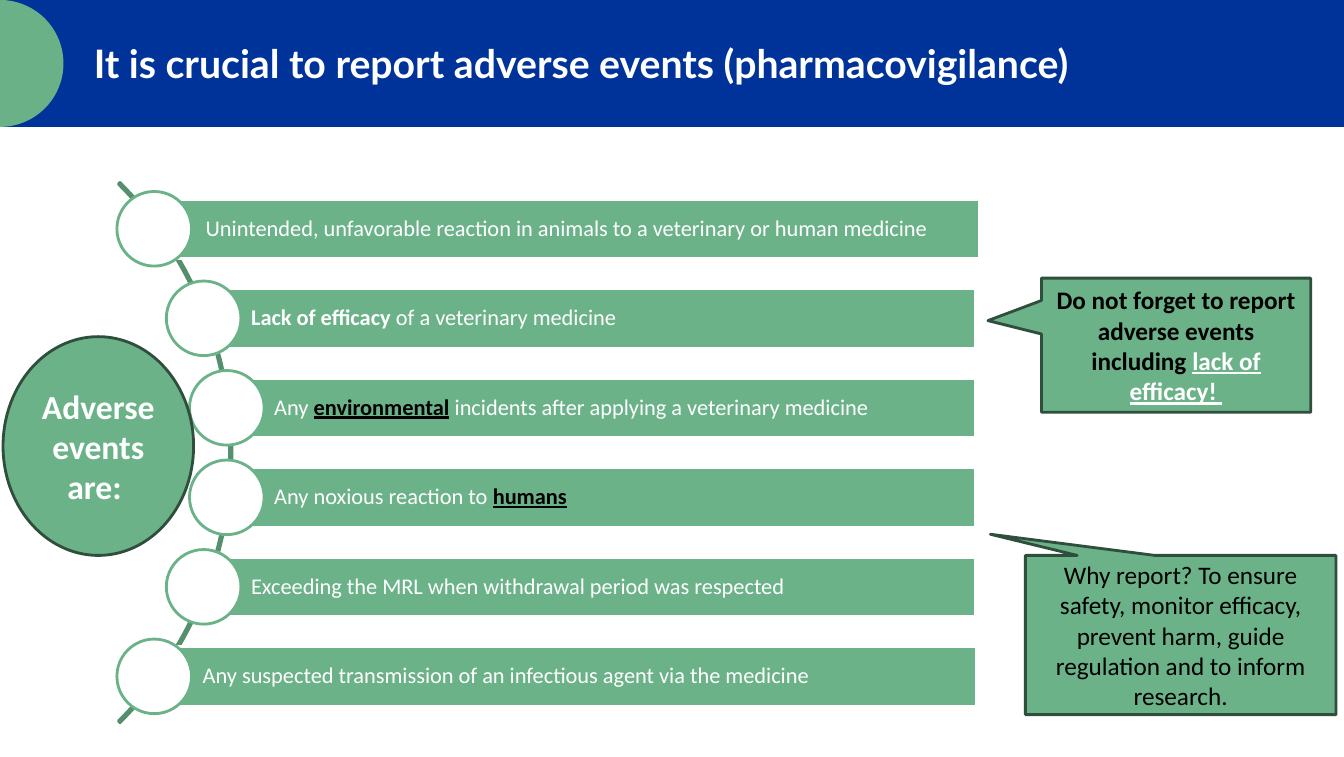
from math import cos, pi, sin

from pptx import Presentation
from pptx.dml.color import RGBColor
from pptx.enum.shapes import MSO_SHAPE as SHAPE
from pptx.enum.text import MSO_ANCHOR as ANCHOR, PP_ALIGN as ALIGN
from pptx.util import Inches, Pt

BLUE = RGBColor(0x00, 0x33, 0x99)
HEADER_GREEN = RGBColor(0x6B, 0xB1, 0x88)
GREEN = RGBColor(0x6B, 0xB2, 0x89)
ARC_GREEN = RGBColor(0x56, 0x8F, 0x6E)
DARK_GREEN = RGBColor(0x2F, 0x4E, 0x3C)
WHITE = RGBColor(0xFF, 0xFF, 0xFF)
BLACK = RGBColor(0x00, 0x00, 0x00)

PLAIN_WHITE = (WHITE, False, False)
BOLD_WHITE = (WHITE, True, False)
PLAIN_BLACK = (BLACK, False, False)
BOLD_BLACK = (BLACK, True, False)
KEYWORD = (BLACK, True, True)
WARNING = (WHITE, True, True)

TITLE = [("It is crucial to report adverse events (pharmacovigilance)", BOLD_WHITE)]
HUB = [("Adverse events are: ", BOLD_WHITE)]
EVENTS = [
    (1.57, 9.71, [("Unintended, unfavorable reaction in animals to a veterinary or human medicine",
                   PLAIN_WHITE)]),
    (2.02, 9.67, [("Lack of efficacy ", BOLD_WHITE), ("of a veterinary medicine", PLAIN_WHITE)]),
    (2.25, 9.68, [("Any ", PLAIN_WHITE), ("environmental", KEYWORD),
                  (" incidents after applying a veterinary medicine", PLAIN_WHITE)]),
    (2.25, 9.68, [("Any noxious reaction to ", PLAIN_WHITE), ("humans", KEYWORD)]),
    (2.02, 9.67, [("Exceeding the MRL when withdrawal period was respected", PLAIN_WHITE)]),
    (1.54, 9.68, [("Any suspected transmission of an infectious agent via the medicine",
                   PLAIN_WHITE)]),
]
CALLOUTS = [
    ((10.33, 2.76, 2.67, 1.33), (-0.699, -0.183),
     [("Do not forget to report adverse events including ", BOLD_BLACK),
      ("lack of efficacy! ", WARNING)]),
    ((10.17, 5.51, 3.08, 1.58), (-0.613, -0.633),
     [("Why report? To ensure safety, monitor efficacy, prevent harm, guide regulation "
       "and to inform research.", PLAIN_BLACK)]),
]
FIRST_CENTER, PITCH = 2.27, 0.888
BAR_HEIGHT, DOT = 0.59, 0.74
DOT_CENTERS = [1.53, 2.02, 2.25, 2.25, 2.02, 1.53]
HEADER_HEIGHT = 1.26


def style(shape, fill, line=None):
    shape.shadow.inherit = False
    if fill is None:
        shape.fill.background()
    else:
        shape.fill.solid()
        shape.fill.fore_color.rgb = fill
    if line is None:
        shape.line.fill.background()
    else:
        shape.line.color.rgb = line
        shape.line.width = Pt(2)
    return shape


def add(s, kind, box, fill, line=None):
    return style(s.shapes.add_shape(kind, *map(Inches, box)), fill, line)


def write(shape, runs, size, align=ALIGN.CENTER, anchor=ANCHOR.MIDDLE, font="Calibri"):
    tf = shape.text_frame
    tf.word_wrap = True
    tf.vertical_anchor = anchor
    p = tf.paragraphs[0]
    p.alignment = align
    for text, (color, bold, underline) in runs:
        r = p.add_run()
        r.text = text
        r.font.name = font
        r.font.size = Pt(size)
        r.font.bold = bold
        r.font.underline = underline
        r.font.color.rgb = color
    return tf


def add_header(s):
    band = add(s, SHAPE.RECTANGLE, (0, 0, 13.33, HEADER_HEIGHT), BLUE)
    radius = HEADER_HEIGHT / 2
    angles = [-pi / 2 + pi * i / 60 for i in range(61)]
    rim = [(Inches(radius * cos(a)), Inches(radius + radius * sin(a))) for a in angles]
    builder = s.shapes.build_freeform(*rim[0])
    builder.add_line_segments(rim[1:], close=True)
    half_disc = style(builder.convert_to_shape(), HEADER_GREEN)

    title = s.shapes.title
    title.left, title.top, title.width, title.height = map(Inches, (0.83, 0.34, 10.58, 0.52))
    write(title, TITLE, 28, ALIGN.LEFT, ANCHOR.TOP, "Lato")
    for backdrop in (band, half_disc):
        title.element.addprevious(backdrop.element)


def add_events(s):
    arc = add(s, SHAPE.BLOCK_ARC, (-5.28, 0.7, 7.58, 7.58), None, ARC_GREEN)
    for i, value in enumerate((189, 27, 0.003)):
        arc.adjustments[i] = value

    for i, (left, right, runs) in enumerate(EVENTS):
        y = FIRST_CENTER + PITCH * i
        bar = add(s, SHAPE.RECTANGLE,
                  (left, y - BAR_HEIGHT / 2, right - left, BAR_HEIGHT), GREEN, WHITE)
        tf = write(bar, runs, 16, ALIGN.LEFT)
        tf.margin_left = Inches(0.47)
        tf.margin_right = tf.margin_top = tf.margin_bottom = Inches(0.04)
        tf.paragraphs[0].line_spacing = 0.9
        add(s, SHAPE.OVAL, (DOT_CENTERS[i] - DOT / 2, y - DOT / 2, DOT, DOT), WHITE, GREEN)

    hub = add(s, SHAPE.OVAL, (0.03, 3.34, 1.89, 2.17), GREEN, DARK_GREEN)
    write(hub, HUB, 24)


def add_callouts(s):
    for box, pointer, runs in CALLOUTS:
        callout = add(s, SHAPE.RECTANGULAR_CALLOUT, box, GREEN, DARK_GREEN)
        callout.adjustments[0], callout.adjustments[1] = pointer
        write(callout, runs, 18)


def main():
    prs = Presentation()
    prs.slide_width, prs.slide_height = Inches(13.33), Inches(7.51)
    s = prs.slides.add_slide(prs.slide_layouts[5])
    add_header(s)
    add_callouts(s)
    add_events(s)
    prs.save("out.pptx")


if __name__ == "__main__":
    main()
